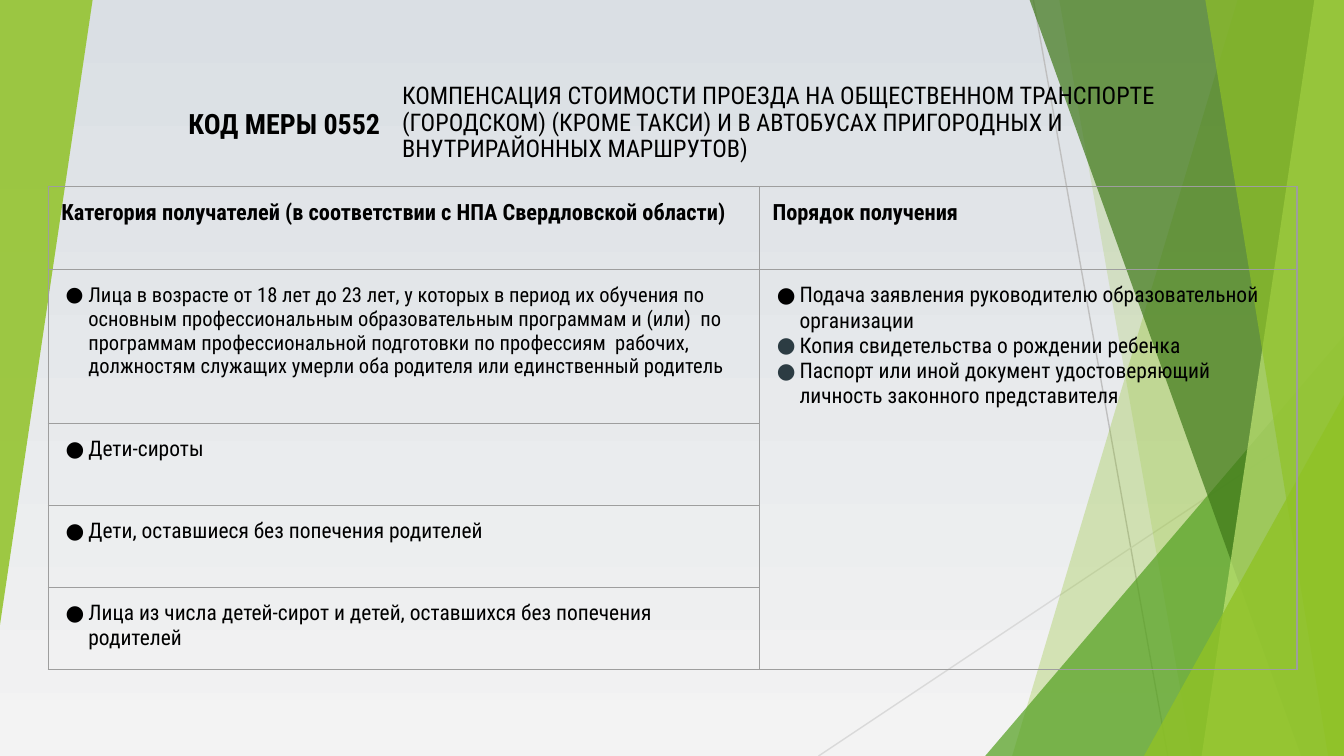
"""Build the slide on travel cost compensation, measure code 0552."""
from lxml import etree
from pptx import Presentation
from pptx.dml.color import RGBColor
from pptx.enum import shapes, text
from pptx.oxml import ns
from pptx.util import Cm, Pt

THEME = {
    "font": "Roboto Condensed", "ink": "000000", "slate": "2C3C43",
    "grid": "9E9E9E", "sky": ("DADFE4", "F3F3F3"), "rays": ("BFBFBF", "D9D9D9"),
    "lime": "90C226", "leaf": "54A021", "moss": "3F7819", "pale": "C0E474",
    "title": 13, "code": 15, "head": 12, "dense": 11, "item": 11.5, "line": 0.75,
}
WIDE, HIGH = 25.4, 14.29


def add(node, tag, **attrs):
    return etree.SubElement(node, ns.qn(tag), attrs)


def write(frame, lines, size, bold=False, dots=()):
    frame.word_wrap = True
    for i, line in enumerate(lines):
        par = frame.paragraphs[0] if i == 0 else frame.add_paragraph()
        run = par.add_run()
        run.text = line
        look = {"name": THEME["font"], "size": Pt(size), "bold": bold}
        for key, val in look.items():
            setattr(run.font, key, val)
        run.font.color.rgb = RGBColor.from_string(THEME["ink"])
        if dots:
            props = par._p.get_or_add_pPr()
            props.set("marL", str(Cm(0.51)))
            props.set("indent", str(Cm(-0.43)))
            add(add(props, "a:buClr"), "a:srgbClr", val=THEME[dots[i]])
            add(props, "a:buFont", typeface=THEME["font"])
            add(props, "a:buChar", char="●")


deck = Presentation()
deck.slide_width, deck.slide_height = Cm(WIDE), Cm(HIGH)
slide = deck.slides.add_slide(deck.slide_layouts[5])
items = slide.shapes

fill = slide.background.fill
fill.gradient()
fill.gradient_angle = 270
for stop, tone, place in zip(fill.gradient_stops, THEME["sky"], (0, 1)):
    stop.color.rgb = RGBColor.from_string(tone)
    stop.position = place

rays = [(19.53, 0, 22.07, HIGH), (WIDE, 7.67, 15.47, HIGH)]
for ends, tone in zip(rays, THEME["rays"]):
    ray = items.add_connector(shapes.MSO_CONNECTOR.STRAIGHT, *map(Cm, ends))
    ray.line.color.rgb = RGBColor.from_string(tone)
    ray.line.width = Pt(THEME["line"])
    add(ray._element.spPr, "a:effectLst")

# Panes give their top and bottom left edge; triangles give a box and a turn.
facets = [
    ((23.39, 19.13), "lime", 30),
    ((20.02, 22.53), "lime", 20),
    ((18.62, 6.35, 6.78, 7.94, 0), "leaf", 72),
    ((19.46, 24.59), "moss", 70),
    ((24.84, 22.71), "pale", 70),
    ((22.78, 25.1), "lime", 65),
    ((21.62, 7.47, 3.78, 6.82, 0), "lime", 80),
    ((0, 0, 1.75, 11.81, 180), "lime", 85),
]
for spot, tone, alpha in facets:
    if len(spot) == 2:
        top, low = spot
        path = items.build_freeform(Cm(top), 0)
        path.add_line_segments(
            [(Cm(x), Cm(y)) for x, y in ((WIDE, 0), (WIDE, HIGH), (low, HIGH))])
        facet = path.convert_to_shape()
    else:
        facet = items.add_shape(
            shapes.MSO_SHAPE.ISOSCELES_TRIANGLE, *map(Cm, spot[:4]))
        facet.adjustments[0] = 1
        facet.rotation = spot[4]
    facet.shadow.inherit = False
    facet.line.fill.background()
    facet.fill.solid()
    facet.fill.fore_color.rgb = RGBColor.from_string(THEME[tone])
    color = facet._element.spPr.find(".//" + ns.qn("a:srgbClr"))
    add(color, "a:alpha", val=str(alpha * 1000))

title = items.title
items._spTree.append(title._element)
code = items.add_textbox(0, 0, 0, 0)
heads = [
    (title, (7.42, 1.35, 16, 1.96), (0.18, 0.1), "title", text.PP_ALIGN.LEFT,
     "КОМПЕНСАЦИЯ СТОИМОСТИ ПРОЕЗДА НА ОБЩЕСТВЕННОМ ТРАНСПОРТЕ (ГОРОДСКОМ) "
     "(КРОМЕ ТАКСИ) И В АВТОБУСАХ ПРИГОРОДНЫХ И ВНУТРИРАЙОННЫХ МАРШРУТОВ)"),
    (code, (2.08, 1.35, 5.36, 1.96), (0.25, 0.25), "code", text.PP_ALIGN.RIGHT,
     "КОД МЕРЫ 0552"),
]
for box, area, (side, edge), role, align, words in heads:
    for key, val in zip(("left", "top", "width", "height"), area):
        setattr(box, key, Cm(val))
    frame = box.text_frame
    form = {
        "margin_left": Cm(side), "margin_right": Cm(side),
        "margin_top": Cm(edge), "margin_bottom": Cm(edge),
        "vertical_anchor": text.MSO_ANCHOR.MIDDLE,
        "auto_size": text.MSO_AUTO_SIZE.NONE,
    }
    for key, val in form.items():
        setattr(frame, key, val)
    write(frame, [words], THEME[role], role == "code")
    frame.paragraphs[0].alignment = align
title.text_frame.paragraphs[0].line_spacing = 0.9

cols, rows = (13.44, 10.16), (1.57, 2.9, 1.55, 1.55, 1.55)
table = items.add_table(len(rows), len(cols), Cm(0.91), Cm(3.53),
                        Cm(sum(cols)), Cm(sum(rows))).table
table.first_row = table.horz_banding = False
for col, size in zip(table.columns, cols):
    col.width = Cm(size)
for row, size in zip(table.rows, rows):
    row.height = Cm(size)
for cell in table.iter_cells():
    for side in ("left", "right", "top", "bottom"):
        setattr(cell, "margin_" + side, Cm(0.25))
    props = cell._tc.get_or_add_tcPr()
    for side in "LRTB":
        line = add(props, "a:ln" + side, w=str(Pt(THEME["line"])))
        add(add(line, "a:solidFill"), "a:srgbClr", val=THEME["grid"])
    cell.fill.background()
table.cell(1, 1).merge(table.cell(4, 1))

heading = ["Категория получателей (в соответствии с НПА Свердловской области)",
           "Порядок получения"]
for i, words in enumerate(heading):
    write(table.cell(0, i).text_frame, [words], THEME["head"], True)

groups = [
    "Лица в возрасте от 18 лет до 23 лет, у которых в период их обучения по "
    "основным профессиональным образовательным программам и (или)  по "
    "программам профессиональной подготовки по профессиям  рабочих, "
    "должностям служащих умерли оба родителя или единственный родитель",
    "Дети-сироты",
    "Дети, оставшиеся без попечения родителей",
    "Лица из числа детей-сирот и детей, оставшихся без попечения родителей",
]
for i, words in enumerate(groups, 1):
    size = THEME["dense" if i == 1 else "item"]
    write(table.cell(i, 0).text_frame, [words], size, dots=["ink"])

steps = [
    "Подача заявления руководителю образовательной организации",
    "Копия свидетельства о рождении ребенка",
    "Паспорт или иной документ удостоверяющий личность законного представителя",
]
write(table.cell(1, 1).text_frame, steps, THEME["item"],
      dots=["ink", "slate", "slate"])

deck.save("out.pptx")
